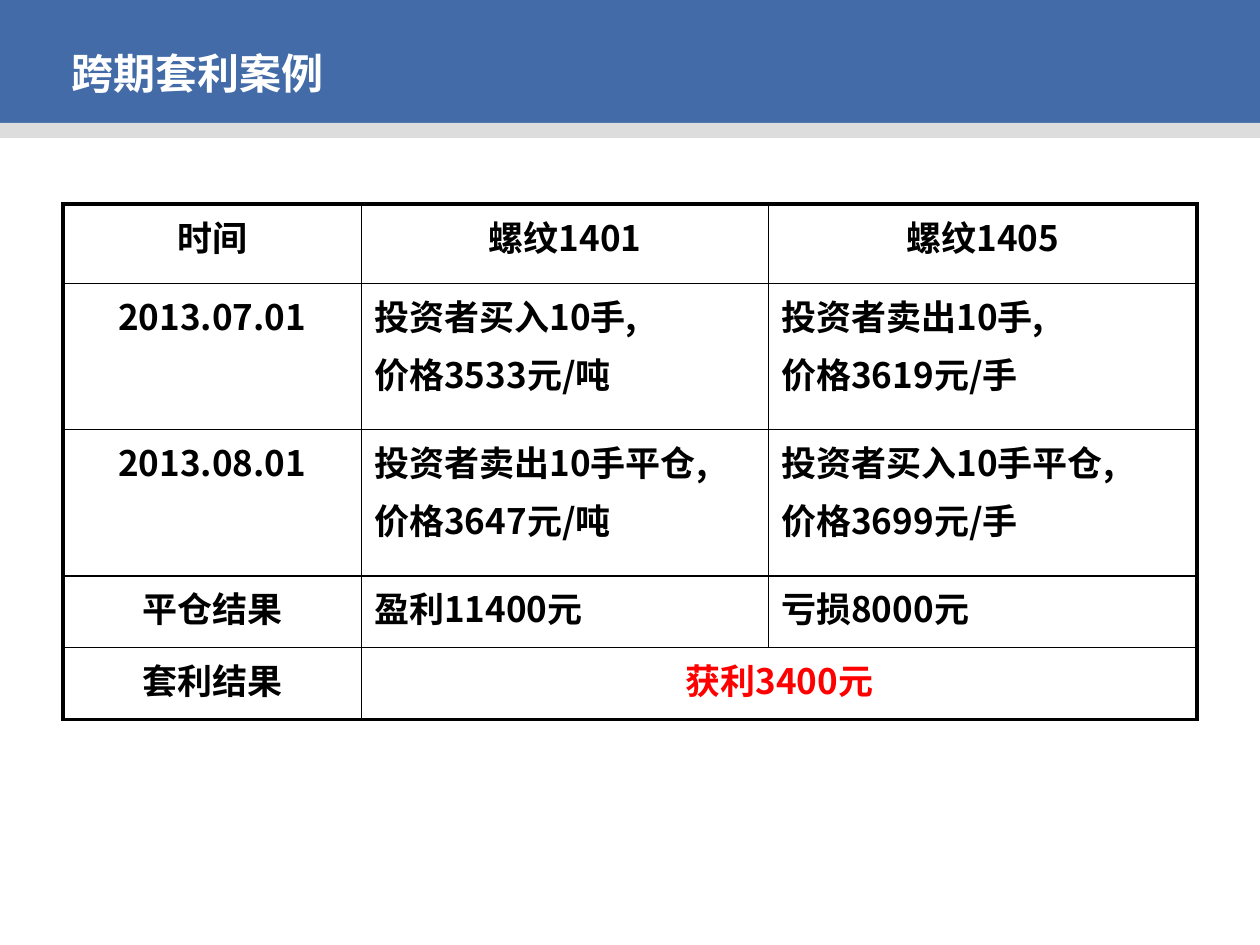
from lxml.etree import SubElement
from pptx import Presentation
from pptx.dml.color import RGBColor
from pptx.enum.shapes import MSO_SHAPE as SHAPE
from pptx.enum.text import MSO_ANCHOR as ANCHOR, PP_ALIGN as ALIGN
from pptx.oxml.ns import qn
from pptx.util import Inches, Pt

BLUE = RGBColor(0x43, 0x6B, 0xA7)
GREY = RGBColor(0xDD, 0xDD, 0xDD)
WHITE = RGBColor(0xFF, 0xFF, 0xFF)
BLACK = RGBColor(0, 0, 0)
RED = RGBColor(0xFF, 0, 0)

WIDTH, HEIGHT = Inches(10), Inches(7.5)
CJK = "Noto Sans CJK SC"
TITLE = dict(name="Arial", size=Pt(24), bold=True)
BODY = dict(name=CJK, size=Pt(20), bold=True)
THIN, THICK = Pt(1), Pt(2.25)

COLS = [2.37, 3.23, 3.4]
ROWS = [0.63, 1.16, 1.16, 0.57, 0.57]
CELLS = [
    ["时间", "螺纹1401", "螺纹1405"],
    ["2013.07.01", "投资者买入10手,\n价格3533元/吨", "投资者卖出10手,\n价格3619元/手"],
    ["2013.08.01", "投资者卖出10手平仓,\n价格3647元/吨", "投资者买入10手平仓,\n价格3699元/手"],
    ["平仓结果", "盈利11400元", "亏损8000元"],
    ["套利结果", "获利3400元", ""],
]


def add_band(s, top, height, color):
    """Full-width bar; top and height are shares of the slide height."""
    sp = s.shapes.add_shape(SHAPE.RECTANGLE, 0, int(HEIGHT * top), WIDTH, int(HEIGHT * height))
    sp.shadow.inherit = False
    sp.fill.solid()
    sp.fill.fore_color.rgb = color
    sp.line.fill.background()


def write(tf, text, style, color, align):
    for i, line in enumerate(text.split("\n")):
        p = tf.paragraphs[0] if i == 0 else tf.add_paragraph()
        p.alignment = align
        if i:
            p.space_before = Pt(4)
        r = p.add_run()
        r.text = line
        for key, value in style.items():
            setattr(r.font, key, value)
        r.font.color.rgb = color
        SubElement(r.font._element, qn("a:ea"), typeface=CJK)


def add_title(s, text):
    sp = s.shapes.add_textbox(int(WIDTH * 0.047), int(HEIGHT * 0.043),
                              int(WIDTH * 0.6), int(HEIGHT * 0.067))
    tf = sp.text_frame
    tf.word_wrap = True
    tf.vertical_anchor = ANCHOR.MIDDLE
    write(tf, text, TITLE, WHITE, ALIGN.LEFT)


def set_borders(cell, widths):
    tc_pr = cell._tc.get_or_add_tcPr()
    for side, width in widths.items():
        ln = SubElement(tc_pr, qn(f"a:ln{side}"), w=str(int(width)))
        fill = SubElement(ln, qn("a:solidFill"))
        SubElement(fill, qn("a:srgbClr"), val=str(BLACK))


def add_case_table(s):
    last_row, last_col = len(ROWS) - 1, len(COLS) - 1
    table = s.shapes.add_table(len(ROWS), len(COLS), Inches(0.5), Inches(1.62),
                               Inches(sum(COLS)), Inches(sum(ROWS))).table
    table.first_row = table.horz_banding = False
    for col, width in zip(table.columns, COLS):
        col.width = Inches(width)
    for row, height in zip(table.rows, ROWS):
        row.height = Inches(height)
    table.cell(last_row, 1).merge(table.cell(last_row, last_col))

    for i, texts in enumerate(CELLS):
        for j, text in enumerate(texts):
            cell = table.cell(i, j)
            # Thick frame around the table, thin lines inside
            edges = dict(L=j == 0, R=j == last_col, T=i == 0, B=i == last_row)
            if cell.is_merge_origin:
                edges["R"] = True
            set_borders(cell, {k: THICK if outer else THIN for k, outer in edges.items()})
            cell.fill.background()
            if text:
                centred = j == 0 or i in (0, last_row)
                write(cell.text_frame, text, BODY, RED if cell.is_merge_origin else BLACK,
                      ALIGN.CENTER if centred else ALIGN.JUSTIFY)


def main():
    prs = Presentation()
    prs.slide_width, prs.slide_height = WIDTH, HEIGHT
    s = prs.slides.add_slide(prs.slide_layouts[6])

    # Header
    add_band(s, 0, 0.13, BLUE)
    add_band(s, 0.13, 0.016, GREY)
    add_title(s, "跨期套利案例")

    # Trades and result
    add_case_table(s)
    prs.save("out.pptx")


if __name__ == "__main__":
    main()
